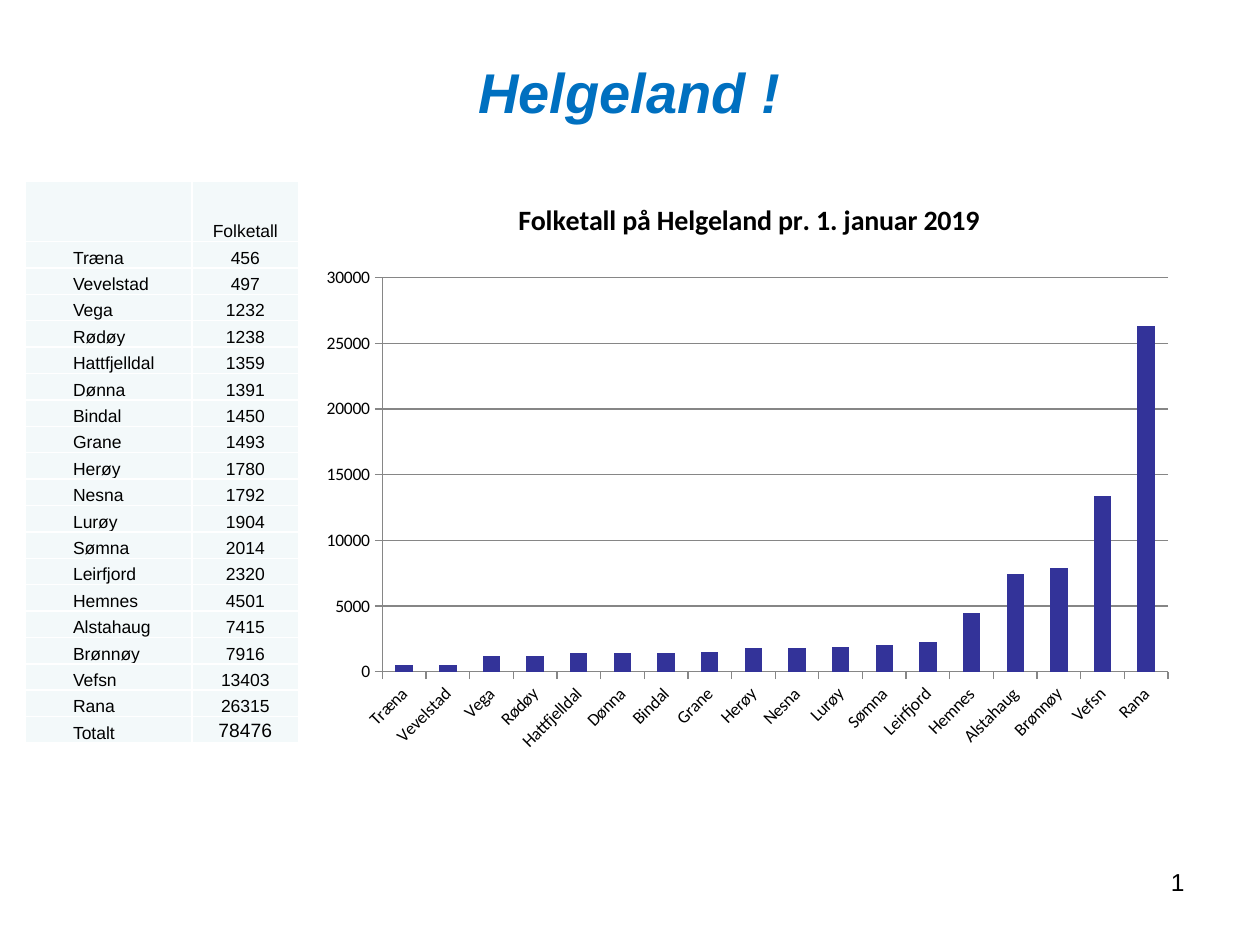
from lxml import etree
from pptx import Presentation
from pptx.chart.data import CategoryChartData
from pptx.dml.color import RGBColor
from pptx.enum.chart import XL_CHART_TYPE, XL_TICK_MARK
from pptx.enum.text import MSO_ANCHOR, PP_ALIGN
from pptx.oxml import parse_xml
from pptx.oxml.ns import nsdecls, qn
from pptx.util import Inches, Pt

COLUMN = XL_CHART_TYPE.COLUMN_CLUSTERED
OUTSIDE = XL_TICK_MARK.OUTSIDE
LEFT, CENTER, RIGHT = PP_ALIGN.LEFT, PP_ALIGN.CENTER, PP_ALIGN.RIGHT
MIDDLE, BOTTOM = MSO_ANCHOR.MIDDLE, MSO_ANCHOR.BOTTOM

SLIDE_W, SLIDE_H = Inches(10), Inches(7.5)
COLS, ROWS = 100, 75
POPULATION = {
    "Træna": 456, "Vevelstad": 497, "Vega": 1232, "Rødøy": 1238,
    "Hattfjelldal": 1359, "Dønna": 1391, "Bindal": 1450, "Grane": 1493,
    "Herøy": 1780, "Nesna": 1792, "Lurøy": 1904, "Sømna": 2014,
    "Leirfjord": 2320, "Hemnes": 4501, "Alstahaug": 7415, "Brønnøy": 7916,
    "Vefsn": 13403, "Rana": 26315,
}


def color(value):
    return RGBColor.from_string(value)


def grid(col, row, width, height):
    cw, rh = SLIDE_W / COLS, SLIDE_H / ROWS
    return int(col * cw), int(row * rh), int(width * cw), int(height * rh)


def style(font, size, name="Arial", fill="000000", bold=False, italic=False):
    font.size, font.name = Pt(size), name
    font.bold, font.italic = bold, italic
    font.color.rgb = color(fill)


def add_title(s, box, text):
    sp = s.shapes.title
    sp.left, sp.top, sp.width, sp.height = box
    sp.text_frame.vertical_anchor = MIDDLE
    p = sp.text_frame.paragraphs[0]
    p.text, p.alignment = text, CENTER
    style(p.font, 32, fill="0070C0", bold=True, italic=True)


def add_page_number(s, box, text):
    tf = s.shapes.add_textbox(*box).text_frame
    tf.word_wrap = True
    p = tf.paragraphs[0]
    p.text, p.alignment = text, RIGHT
    style(p.font, 14)


def format_cell(cell, text, size, align, indent, anchor):
    tc_pr = cell._tc.get_or_add_tcPr()
    for side in ("lnL", "lnR", "lnT", "lnB"):
        tc_pr.append(parse_xml(
            f'<a:{side} {nsdecls("a")} w="12700"><a:solidFill>'
            f'<a:srgbClr val="FFFFFF"/></a:solidFill></a:{side}>'))
    cell.fill.solid()
    cell.fill.fore_color.rgb = color("F3F9FA")
    cell.margin_left = Inches(indent)
    cell.margin_right = cell.margin_top = Inches(0.01)
    cell.margin_bottom = 0
    cell.vertical_anchor = anchor
    p = cell.text_frame.paragraphs[0]
    p.text, p.alignment = text, align
    style(p.font, size)


def add_population_table(s, box):
    rows = [("", "Folketall"), *POPULATION.items(),
            ("Totalt", sum(POPULATION.values()))]
    left, top, width, height = box
    table = s.shapes.add_table(len(rows), 2, *box).table
    table.columns[0].width = int(width * 0.61)
    table.columns[1].width = width - table.columns[0].width
    row_h = int(height * 0.047)
    for i, (name, value) in enumerate(rows):
        table.rows[i].height = row_h
        total = i == len(rows) - 1
        format_cell(table.cell(i, 0), name, 10, LEFT, 0.38, BOTTOM)
        format_cell(table.cell(i, 1), str(value), 11 if total else 10,
                    CENTER, 0.01, MIDDLE if total else BOTTOM)
    table.rows[0].height = height - row_h * (len(rows) - 1)


def place_plot(chart, x, y, w, h):
    plot_area = chart._chartSpace.chart.plotArea
    for old in plot_area.findall(qn("c:layout")):
        plot_area.remove(old)
    layout = etree.Element(qn("c:layout"))
    manual = etree.SubElement(layout, qn("c:manualLayout"))
    settings = {"layoutTarget": "inner", "xMode": "edge", "yMode": "edge",
                "x": x, "y": y, "w": w, "h": h}
    for tag, value in settings.items():
        etree.SubElement(manual, qn(f"c:{tag}")).set("val", str(value))
    plot_area.insert(0, layout)


def add_population_chart(s, box, title):
    data = CategoryChartData()
    data.categories = list(POPULATION)
    data.add_series("Folketall", [round(v, -2) for v in POPULATION.values()])
    chart = s.shapes.add_chart(COLUMN, *box, data).chart
    style(chart.font, 10, "Calibri")
    chart.has_legend = False
    chart.has_title = True
    p = chart.chart_title.text_frame.paragraphs[0]
    p.text = title
    style(p.font, 16, "Calibri", bold=True)
    place_plot(chart, 0.08, 0.17, 0.9, 0.67)

    plot = chart.plots[0]
    plot.gap_width = 150
    plot.vary_by_categories = False
    bars = plot.series[0].format.fill
    bars.solid()
    bars.fore_color.rgb = color("333399")

    value_axis, category_axis = chart.value_axis, chart.category_axis
    value_axis.minimum_scale, value_axis.maximum_scale = 0, 30000
    value_axis.major_unit = 5000
    value_axis.has_major_gridlines = True
    category_axis.tick_labels.font.size = Pt(10)
    category_axis._element.txPr.bodyPr.set("rot", "-2700000")
    for axis in (value_axis, category_axis):
        axis.major_tick_mark = OUTSIDE
        style(axis.tick_labels.font, 10, "Calibri")
    for part in (value_axis, category_axis, value_axis.major_gridlines):
        part.format.line.color.rgb = color("868686")
        part.format.line.width = Pt(0.75)


def main():
    prs = Presentation()
    prs.slide_width, prs.slide_height = SLIDE_W, SLIDE_H
    s = prs.slides.add_slide(prs.slide_layouts.get_by_name("Title Only"))
    add_title(s, grid(15.3, 3, 69.3, 8.5), "Helgeland !")
    add_page_number(s, grid(71.7, 68.3, 23.3, 5.2), "1")
    add_population_chart(s, grid(24.8, 14.1, 69.3, 46.7),
                         "Folketall på Helgeland pr. 1. januar 2019")
    add_population_table(s, grid(2, 14.4, 21.7, 44.6))
    prs.save("out.pptx")


if __name__ == "__main__":
    main()
